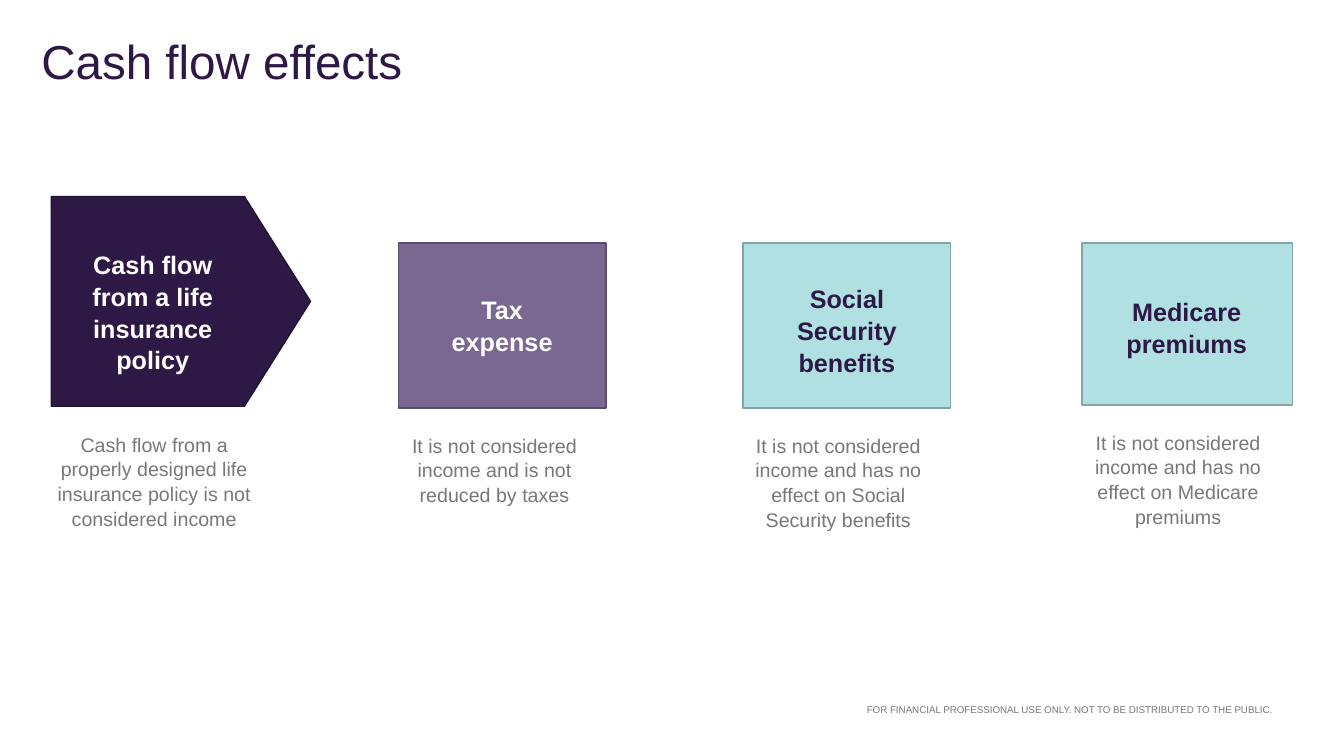
"""Build the slide on cash flow effects of a life insurance policy."""
import pptx
import pptx.util
import pptx.dml.color
import pptx.enum.shapes
import pptx.enum.text

Inches = pptx.util.Inches
Color = pptx.dml.color.RGBColor
Shape = pptx.enum.shapes.MSO_SHAPE
Align = pptx.enum.text.PP_ALIGN
Anchor = pptx.enum.text.MSO_ANCHOR

PLUM = Color(0x2E, 0x19, 0x46)
DARK = Color(0x22, 0x12, 0x34)
MAUVE = Color(0x7B, 0x68, 0x92)
DUSK = Color(0x5B, 0x4D, 0x6C)
AQUA = Color(0xB0, 0xE0, 0xE2)
TEAL = Color(0x82, 0xA6, 0xA7)
GRAY = Color(0x77, 0x78, 0x77)
WHITE = Color(0xFF, 0xFF, 0xFF)

deck = pptx.Presentation()
deck.slide_width = Inches(13.33)
deck.slide_height = Inches(7.5)
slide = deck.slides.add_slide(deck.slide_layouts[6])


def add_text(text, place, size, color, align=Align.CENTER, space=1.05, bold=False):
    box = slide.shapes.add_textbox(*map(Inches, place))
    frame = box.text_frame
    frame.word_wrap = True
    para = frame.paragraphs[0]
    para.alignment = align
    para.line_spacing = space
    run = para.add_run()
    run.text = text
    run.font.name = "Arial"
    run.font.size = pptx.util.Pt(size)
    run.font.bold = bold
    run.font.color.rgb = color
    return frame


title = add_text("Cash flow effects", (0.41, 0.4, 12.12, 0.67), 34, PLUM, Align.LEFT, 0.85)
footer = add_text("FOR FINANCIAL PROFESSIONAL USE ONLY. NOT TO BE DISTRIBUTED TO THE PUBLIC.",
                  (7.15, 6.98, 5.47, 0.12), 7, GRAY, Align.RIGHT, 1.0)
footer.vertical_anchor = Anchor.BOTTOM
for frame in (title, footer):
    frame.margin_left = frame.margin_right = 0
    frame.margin_top = frame.margin_bottom = 0

steps = [
    (Shape.PENTAGON, (0.51, 1.95, 2.57, 2.08), PLUM, DARK, WHITE,
     "Cash flow from a life insurance policy", (0.63, 2.41, 1.77, 1.31),
     "Cash flow from a properly designed life insurance policy is not considered income",
     (0.41, 4.23, 2.24, 1.04)),
    (Shape.RECTANGLE, (3.95, 2.41, 2.06, 1.64), MAUVE, DUSK, WHITE,
     "Tax expense", (4.22, 2.86, 1.52, 0.71),
     "It is not considered income and is not reduced by taxes",
     (3.9, 4.24, 2.01, 0.81)),
    (Shape.RECTANGLE, (7.37, 2.41, 2.06, 1.64), AQUA, TEAL, PLUM,
     "Social Security benefits", (7.66, 2.75, 1.48, 1.01),
     "It is not considered income and has no effect on Social Security benefits",
     (7.31, 4.24, 2.01, 1.04)),
    (Shape.RECTANGLE, (10.73, 2.41, 2.09, 1.61), AQUA, TEAL, PLUM,
     "Medicare premiums", (11.02, 2.88, 1.5, 0.71),
     "It is not considered income and has no effect on Medicare premiums",
     (10.68, 4.21, 2.01, 1.04)),
]

for kind, place, fill, edge, ink, label, spot, note, base in steps:
    card = slide.shapes.add_shape(kind, *map(Inches, place))
    card.shadow.inherit = False
    card.fill.solid()
    card.fill.fore_color.rgb = fill
    card.line.color.rgb = edge
    card.line.width = pptx.util.Pt(1)
    if kind == Shape.PENTAGON:
        card.adjustments[0] = 0.315
    add_text(label, spot, 18, ink, bold=True)
    add_text(note, base, 14, GRAY)

deck.save("out.pptx")
